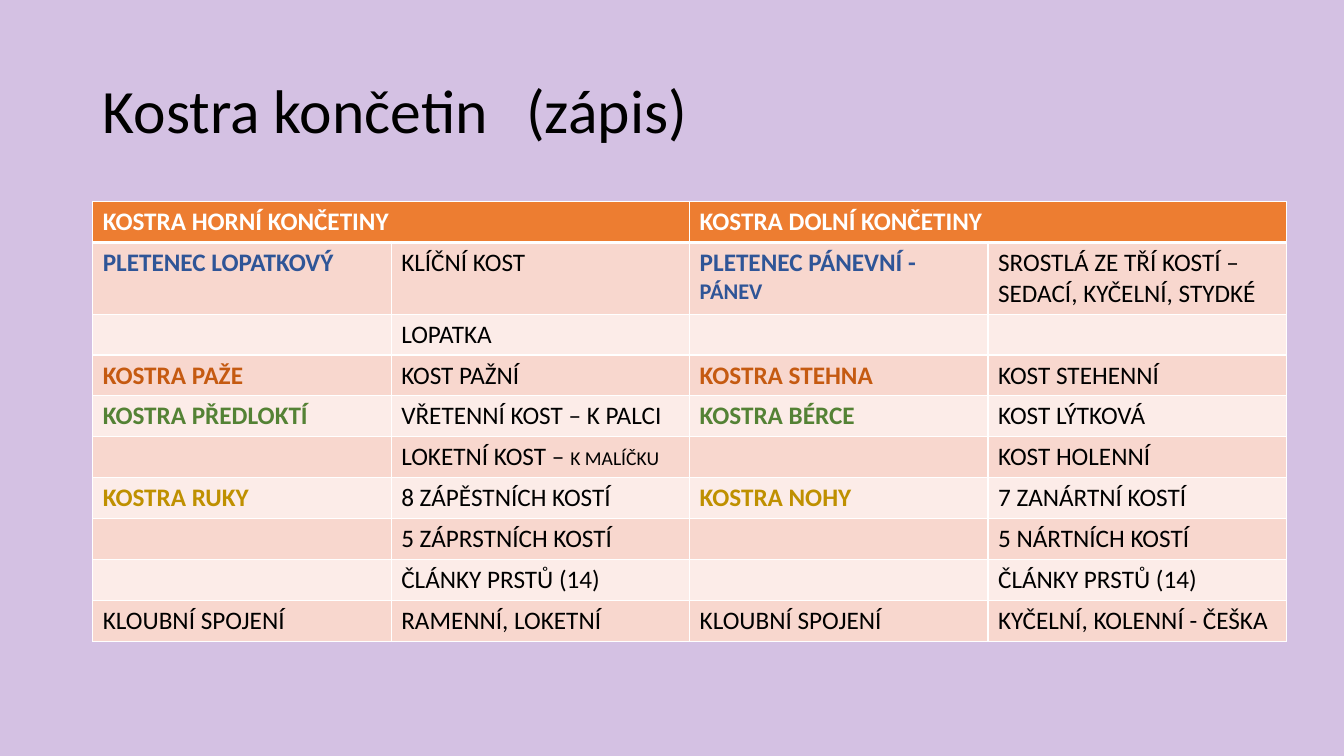
import pptx
import pptx.dml.color
import pptx.enum.text
import pptx.oxml
import pptx.oxml.ns
import pptx.util

Inches = pptx.util.Inches
BLUE, RUST, GREEN, GOLD = "2F5597", "C55A11", "548235", "BF9000"
BANDS = ("FCECE8", "F8D7CE")
HEADINGS = ("KOSTRA HORNÍ KONČETINY", "KOSTRA DOLNÍ KONČETINY")
BONES = [
    (BLUE, "PLETENEC LOPATKOVÝ", "KLÍČNÍ KOST",
     ("PLETENEC PÁNEVNÍ - ", ("PÁNEV", 16)), "SROSTLÁ ZE TŘÍ KOSTÍ – SEDACÍ, KYČELNÍ, STYDKÉ"),
    (None, "", "LOPATKA", "", ""),
    (RUST, "KOSTRA PAŽE", "KOST PAŽNÍ", "KOSTRA STEHNA", "KOST STEHENNÍ"),
    (GREEN, "KOSTRA PŘEDLOKTÍ", "VŘETENNÍ KOST – K PALCI", "KOSTRA BÉRCE", "KOST LÝTKOVÁ"),
    (None, "", ("LOKETNÍ KOST – ", ("K MALÍČKU", 14)), "", "KOST HOLENNÍ"),
    (GOLD, "KOSTRA RUKY", "8 ZÁPĚSTNÍCH KOSTÍ", "KOSTRA NOHY", "7 ZANÁRTNÍ KOSTÍ"),
    (None, "", "5 ZÁPRSTNÍCH KOSTÍ", "", "5 NÁRTNÍCH KOSTÍ"),
    (None, "", "ČLÁNKY PRSTŮ (14)", "", "ČLÁNKY PRSTŮ (14)"),
    (None, "KLOUBNÍ SPOJENÍ", "RAMENNÍ, LOKETNÍ", "KLOUBNÍ SPOJENÍ", "KYČELNÍ, KOLENNÍ - ČEŠKA"),
]


def paint(target, color):
    if hasattr(target, "solid"):
        target.solid()
        target = target.fore_color
    target.rgb = pptx.dml.color.RGBColor.from_string(color)


def write(para, text, size=18, color="000000", bold=False):
    span = para.add_run()
    span.text = text
    span.font.name = "Calibri"
    span.font.size = pptx.util.Pt(size)
    span.font.bold = bold
    paint(span.font.color, color)


class SlideBuilder:
    def __init__(self, deck, background):
        self.page = deck.slides.add_slide(deck.slide_layouts[5])
        paint(self.page.background.fill, background)

    def title(self, text, left, top, width, height, tab):
        box = self.page.shapes.title
        box.left, box.top, box.width, box.height = map(Inches, (left, top, width, height))
        box.text_frame.vertical_anchor = pptx.enum.text.MSO_ANCHOR.MIDDLE
        para = box.text_frame.paragraphs[0]
        para.alignment = pptx.enum.text.PP_ALIGN.LEFT
        para.line_spacing = 0.9
        namespace = pptx.oxml.ns.nsdecls("a")
        para._p.get_or_add_pPr().append(pptx.oxml.parse_xml(
            f'<a:tabLst {namespace}><a:tab pos="{Inches(tab)}" algn="l"/></a:tabLst>'))
        write(para, text, size=44)

    def table(self, rows, columns, left, top, column_width, row_height):
        table = self.page.shapes.add_table(
            rows, columns, Inches(left), Inches(top),
            Inches(column_width * columns), Inches(row_height * rows)).table
        for column in table.columns:
            column.width = Inches(column_width)
        for row in table.rows:
            row.height = Inches(row_height)
        return table

    def cell(self, cell, content, fill, top=1, bottom=1, **style):
        paint(cell.fill, fill)
        properties = cell._tc.get_or_add_tcPr()
        for place, (side, width) in enumerate(zip("LRTB", (1, 1, top, bottom))):
            properties.insert(place, pptx.oxml.parse_xml(
                f'<a:ln{side} {pptx.oxml.ns.nsdecls("a")} w="{pptx.util.Pt(width)}">'
                f'<a:solidFill><a:srgbClr val="FFFFFF"/></a:solidFill></a:ln{side}>'))
        para = cell.text_frame.paragraphs[0]
        for part in (content,) if isinstance(content, str) else content:
            text, size = (part, 18) if isinstance(part, str) else part
            if text:
                write(para, text, size=size, **style)


def main():
    deck = pptx.Presentation()
    deck.slide_width, deck.slide_height = Inches(13.33), Inches(7.5)
    builder = SlideBuilder(deck, "D4C1E3")
    builder.title("Kostra končetin\t(zápis)", 0.92, 0.4, 11.5, 1.45, tab=4.2)
    table = builder.table(len(BONES) + 1, 4, 0.92, 2, 2.96, 0.4)
    for column in range(4):
        heading = "" if column % 2 else HEADINGS[column // 2]
        builder.cell(table.cell(0, column), heading, "ED7D31", bottom=3,
                     color="FFFFFF", bold=True)
    for column in (0, 2):
        table.cell(0, column).merge(table.cell(0, column + 1))
    for row, (color, *contents) in enumerate(BONES, 1):
        for column, content in enumerate(contents):
            labelled = color is not None and column % 2 == 0
            builder.cell(table.cell(row, column), content, BANDS[row % 2],
                         top=3 if row == 1 else 1,
                         color=color if labelled else "000000", bold=labelled)
    deck.save("out.pptx")


if __name__ == "__main__":
    main()
